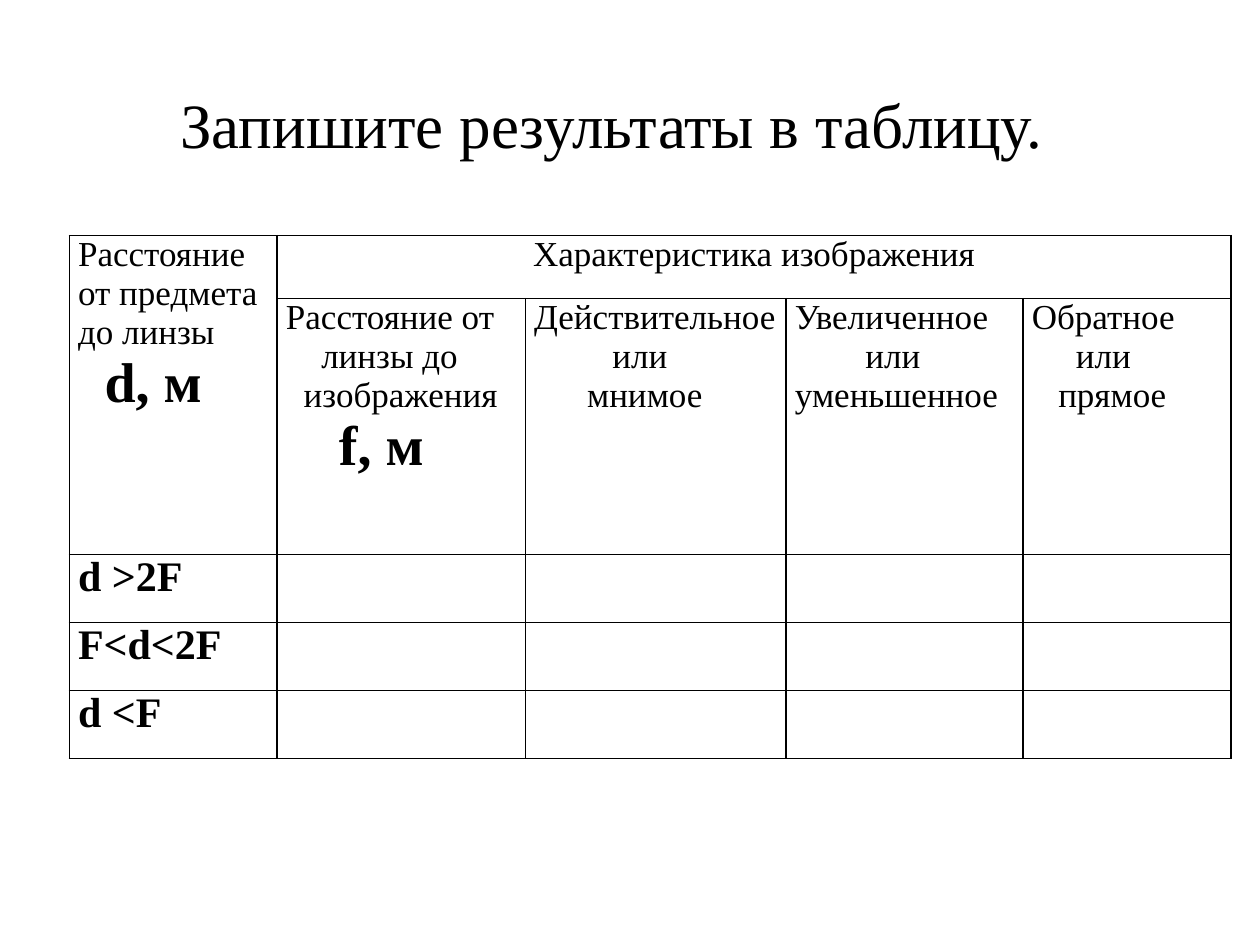
from lxml import etree
from pptx import Presentation
from pptx.dml.color import RGBColor
from pptx.enum.text import MSO_ANCHOR, PP_ALIGN
from pptx.oxml.ns import qn
from pptx.util import Inches, Pt

LEFT, CENTER = PP_ALIGN.LEFT, PP_ALIGN.CENTER
TOP, MIDDLE = MSO_ANCHOR.TOP, MSO_ANCHOR.MIDDLE
TITLE_ONLY = 5

COLS = [1.65, 1.97, 2.07, 1.88, 1.65]
ROWS = [0.5, 2.03, 0.54, 0.54, 0.54]
SYMBOL = {"size": 32, "bold": True}
CONDITION = {"size": 24, "bold": True}
CELLS = {
    (0, 0): [("Расстояние от предмета до линзы", {}),
             ("d, м", {"indent": 0.21, **SYMBOL})],
    (0, 1): [("Характеристика изображения", {"align": CENTER})],
    (1, 1): [("Расстояние от", {}), ("линзы до", {"indent": 0.28}),
             ("изображения", {"indent": 0.14}),
             ("f, м", {"indent": 0.42, **SYMBOL})],
    (1, 2): [("Действительное", {}), ("или", {"indent": 0.62}),
             ("мнимое", {"indent": 0.42})],
    (1, 3): [("Увеличенное", {}), ("или уменьшенное", {"indent": 0.56})],
    (1, 4): [("Обратное", {}), ("или", {"indent": 0.35}),
             ("прямое", {"indent": 0.21})],
    (2, 0): [("d >2F", CONDITION)],
    (3, 0): [("F<d<2F", CONDITION)],
    (4, 0): [("d <F", CONDITION)],
}


def rgb(color):
    return RGBColor.from_string(color)


def write(p, text, font="Times New Roman", color="000000", size=20,
          bold=False, align=LEFT, indent=0):
    p.alignment = align
    if indent:
        pPr = p._p.get_or_add_pPr()
        pPr.set("marL", "0")
        pPr.set("indent", str(Inches(indent)))
    r = p.add_run()
    r.text = text
    r.font.name = font
    r.font.size = Pt(size)
    r.font.bold = bold
    r.font.color.rgb = rgb(color)


class Deck:
    """Hold the table style and the current slide."""

    def __init__(self, prs, line="000000", width=1):
        self.line, self.width = line, width
        self.slide = prs.slides.add_slide(prs.slide_layouts[TITLE_ONLY])

    def title(self, text, left, top, width, height):
        sp = self.slide.shapes.title
        sp.left, sp.top = Inches(left), Inches(top)
        sp.width, sp.height = Inches(width), Inches(height)
        tf = sp.text_frame
        tf.word_wrap = True
        tf.vertical_anchor = MIDDLE
        write(tf.paragraphs[0], text, size=36)

    def borders(self, cell):
        tcPr = cell._tc.get_or_add_tcPr()
        for i, side in enumerate(("lnL", "lnR", "lnT", "lnB")):
            ln = etree.Element(qn(f"a:{side}"), w=str(Pt(self.width)))
            fill = etree.SubElement(ln, qn("a:solidFill"))
            etree.SubElement(fill, qn("a:srgbClr"), val=self.line)
            tcPr.insert(i, ln)

    def table(self, cells, cols, rows, left, top):
        frame = self.slide.shapes.add_table(
            len(rows), len(cols), Inches(left), Inches(top),
            Inches(sum(cols)), Inches(sum(rows)))
        table = frame.table
        table.first_row = table.horz_banding = False
        for col, width in zip(table.columns, cols):
            col.width = Inches(width)
        for row, height in zip(table.rows, rows):
            row.height = Inches(height)
        for cell in table.iter_cells():
            cell.margin_left = cell.margin_right = Inches(0.07)
            cell.margin_top = cell.margin_bottom = 0
            cell.vertical_anchor = TOP
            cell.fill.background()
            self.borders(cell)
        for (row, col), lines in cells.items():
            tf = table.cell(row, col).text_frame
            for i, (text, style) in enumerate(lines):
                p = tf.add_paragraph() if i else tf.paragraphs[0]
                write(p, text, **style)
        table.cell(0, 0).merge(table.cell(1, 0))
        table.cell(0, 1).merge(table.cell(0, len(cols) - 1))


def main():
    prs = Presentation()
    prs.slide_width, prs.slide_height = Inches(10), Inches(7.5)
    deck = Deck(prs)
    deck.title("Запишите результаты в таблицу.", 1.33, 0.62, 7.73, 0.71)
    deck.table(CELLS, COLS, ROWS, 0.55, 1.87)
    prs.save("out.pptx")


if __name__ == "__main__":
    main()
